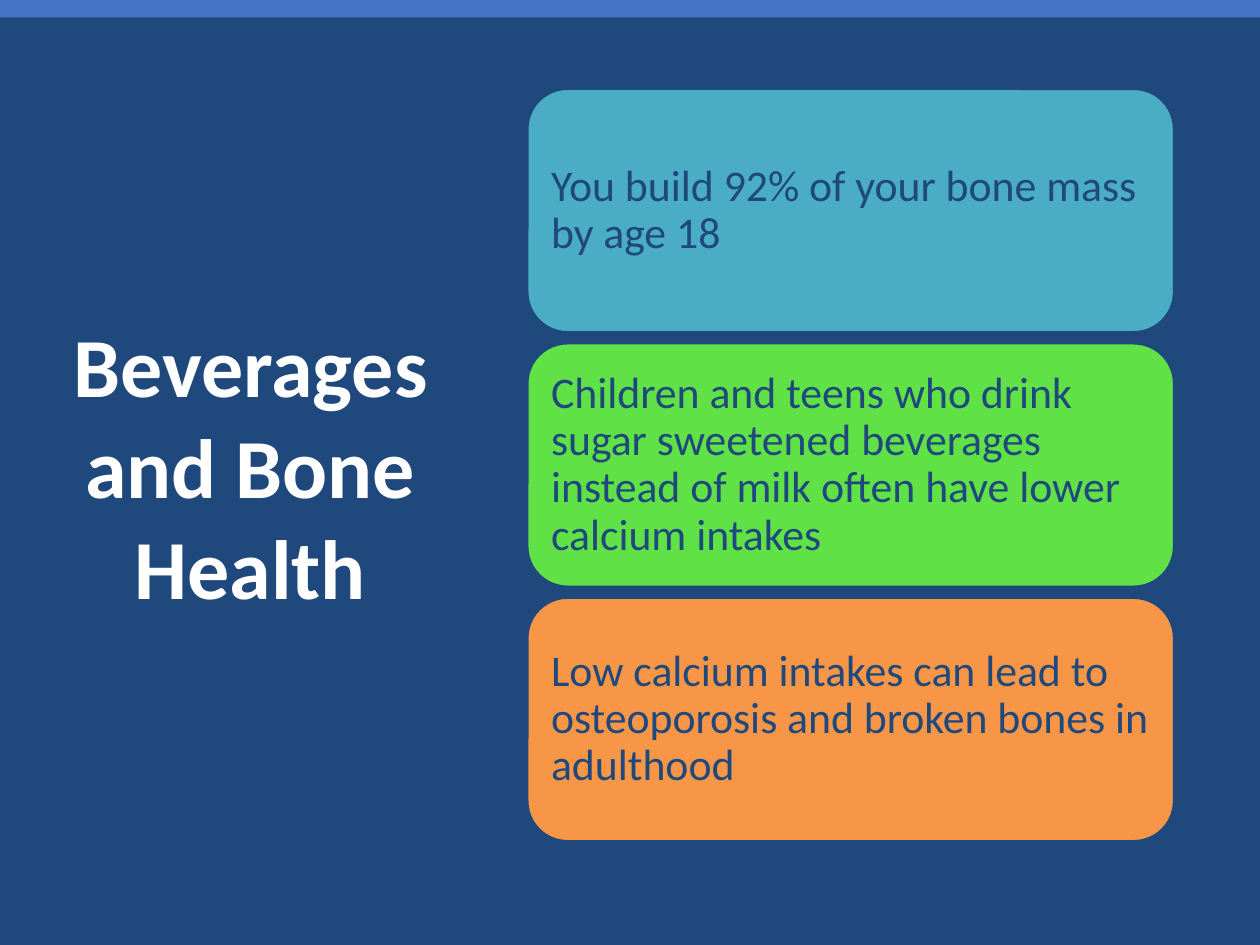
from dataclasses import dataclass

from pptx import Presentation
from pptx import util as u
from pptx.dml.color import RGBColor
from pptx.enum import shapes, text


@dataclass(frozen=True)
class Theme:
    font: str = "Calibri"
    navy: str = "1F497D"
    bar: str = "4472C4"
    white: str = "FFFFFF"
    cards: tuple = ("4BACC6", "60E146", "F79646")
    title_size: int = 48
    card_size: int = 25


@dataclass(frozen=True)
class Box:
    left: float
    top: float
    width: float
    height: float

    def lengths(self):
        return [u.Cm(value) for value in (self.left, self.top, self.width, self.height)]


THEME = Theme()
TITLE = "Beverages and Bone Health"
FACTS = (
    "You build 92% of your bone mass by age 18",
    "Children and teens who drink sugar sweetened beverages instead of milk "
    "often have lower calcium intakes",
    "Low calcium intakes can lead to osteoporosis and broken bones in adulthood",
)


def write_text(shape, content, *, size, color, bold=False,
               align=text.PP_ALIGN.LEFT, line_spacing=1.0, inset=0.25):
    frame = shape.text_frame
    frame.word_wrap = True
    frame.auto_size = text.MSO_AUTO_SIZE.NONE
    frame.vertical_anchor = text.MSO_ANCHOR.MIDDLE
    frame.margin_left = frame.margin_right = u.Cm(inset)
    frame.margin_top = frame.margin_bottom = u.Cm(inset)
    paragraph = frame.paragraphs[0]
    paragraph.alignment = align
    paragraph.line_spacing = line_spacing
    run = paragraph.add_run()
    run.text = content
    run.font.name = THEME.font
    run.font.size = u.Pt(size)
    run.font.bold = bold
    run.font.color.rgb = RGBColor.from_string(color)


def add_block(slide, kind, box, fill, outline=None):
    shape = slide.shapes.add_shape(kind, *box.lengths())
    shape.shadow.inherit = False
    shape.fill.solid()
    shape.fill.fore_color.rgb = RGBColor.from_string(fill)
    if outline:
        shape.line.color.rgb = RGBColor.from_string(outline)
        shape.line.width = u.Pt(2)
    else:
        shape.line.fill.background()
    return shape


def place_title(slide, box):
    title = slide.shapes.title
    title.left, title.top, title.width, title.height = box.lengths()
    write_text(title, TITLE, size=THEME.title_size, color=THEME.white,
               bold=True, align=text.PP_ALIGN.CENTER)


def place_top_bar(slide, box):
    add_block(slide, shapes.MSO_SHAPE.RECTANGLE, box, THEME.bar)


def place_fact_cards(slide, box, gap=0.2):
    height = (box.height - gap * (len(FACTS) - 1)) / len(FACTS)
    for index, (fact, fill) in enumerate(zip(FACTS, THEME.cards)):
        card_box = Box(box.left, box.top + index * (height + gap), box.width, height)
        card = add_block(slide, shapes.MSO_SHAPE.ROUNDED_RECTANGLE, card_box,
                         fill, THEME.navy)
        write_text(card, fact, size=THEME.card_size, color=THEME.navy,
                   line_spacing=0.9)


def main():
    presentation = Presentation()
    presentation.slide_width = u.Cm(25.4)
    presentation.slide_height = u.Cm(19.05)
    slide = presentation.slides.add_slide(presentation.slide_layouts.get_by_name("Title Only"))
    slide.background.fill.solid()
    slide.background.fill.fore_color.rgb = RGBColor.from_string(THEME.navy)
    place_title(slide, Box(1.09, 1.73, 7.92, 15.29))
    place_top_bar(slide, Box(0, 0, 25.4, 0.35))
    place_fact_cards(slide, Box(10.62, 1.78, 13.06, 15.19))
    presentation.save("out.pptx")


if __name__ == "__main__":
    main()
